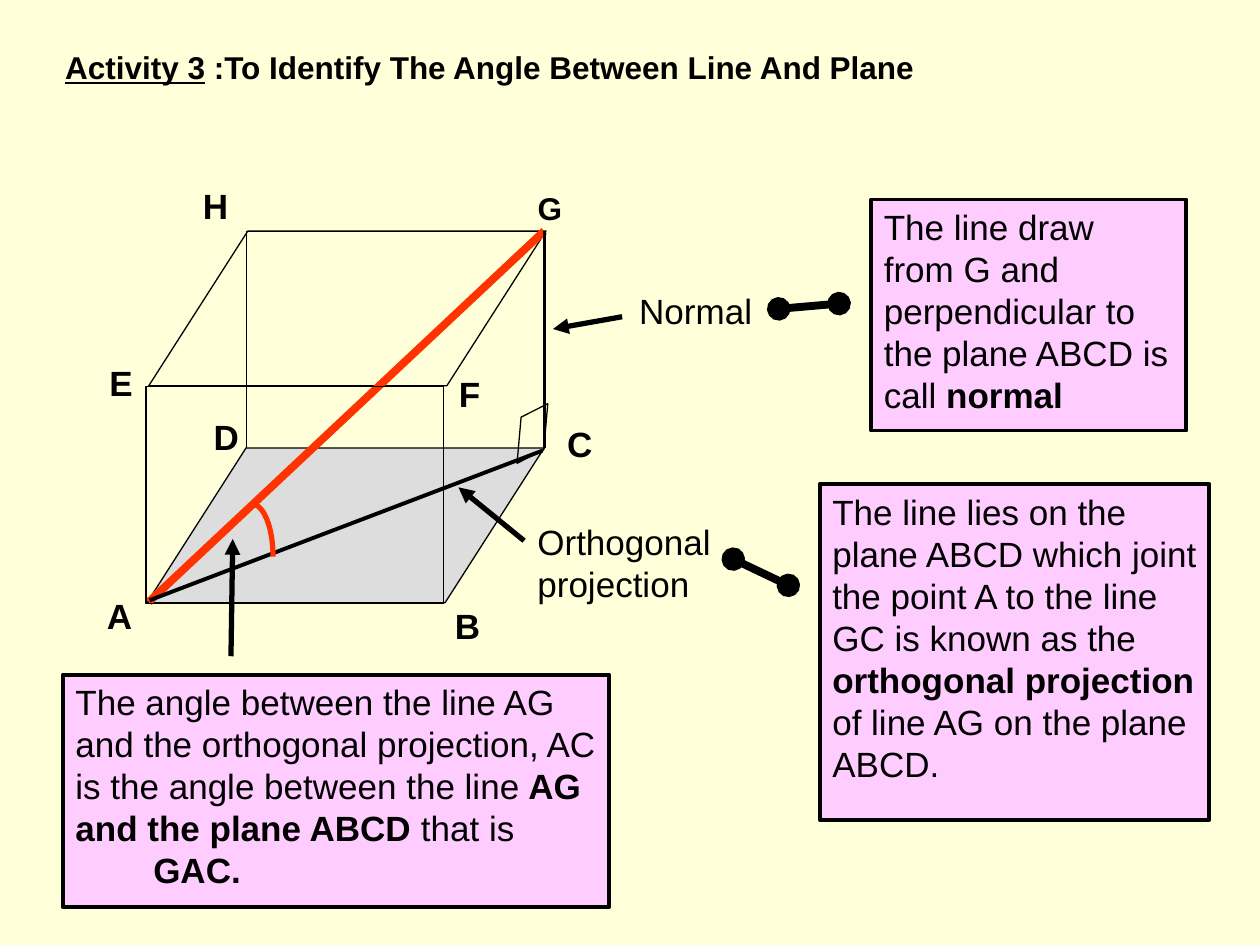
from dataclasses import dataclass
from lxml.etree import SubElement
from pptx import Presentation
from pptx.dml.color import RGBColor
from pptx.enum.shapes import MSO_CONNECTOR, MSO_SHAPE
from pptx.enum.text import MSO_ANCHOR, MSO_AUTO_SIZE, PP_ALIGN
from pptx.oxml.ns import qn
from pptx.util import Pt


@dataclass(frozen=True)
class Theme:
    font: str = "Arial"
    background: str = "FFFFD9"
    ink: str = "000000"
    accent: str = "FF3300"
    note: str = "FFCCFF"
    base: str = "DDDDDD"
    title_size: float = 18
    body_size: float = 20
    thin: float = 0.75
    edge: float = 1.5
    border: float = 2.25
    arrow: float = 3
    heavy: float = 4.5


class SlideBuilder:
    def __init__(self, presentation, theme):
        self.theme = theme
        self.slide = presentation.slides.add_slide(presentation.slide_layouts[5])
        fill = self.slide.background.fill
        fill.solid()
        fill.fore_color.rgb = RGBColor.from_string(theme.background)

    def add_runs(self, paragraph, runs, size, align=PP_ALIGN.LEFT):
        paragraph.alignment = align
        for text, style in runs:
            run = paragraph.add_run()
            run.text = text
            run.font.name = self.theme.font
            run.font.size = Pt(size)
            run.font.color.rgb = RGBColor.from_string(self.theme.ink)
            run.font.bold = "b" in style
            run.font.underline = "u" in style

    def title(self, box, runs):
        shape = self.slide.shapes.title
        shape.left, shape.top, shape.width, shape.height = map(Pt, box)
        frame = shape.text_frame
        frame.word_wrap = True
        frame.auto_size = MSO_AUTO_SIZE.NONE
        frame.vertical_anchor = MSO_ANCHOR.TOP
        self.add_runs(frame.paragraphs[0], runs, self.theme.title_size)

    def label(self, box, text, style="", size=None, align=PP_ALIGN.CENTER):
        frame = self.slide.shapes.add_textbox(*map(Pt, box)).text_frame
        frame.word_wrap = True
        self.add_runs(frame.paragraphs[0], [(text, style)], size or self.theme.body_size, align)

    def outline(self, kind, box, fill=None, color=None, width=None, slant=None):
        shape = self.slide.shapes.add_shape(kind, *map(Pt, box))
        shape.shadow.inherit = False
        if fill:
            shape.fill.solid()
            shape.fill.fore_color.rgb = RGBColor.from_string(fill)
        else:
            shape.fill.background()
        shape.line.color.rgb = RGBColor.from_string(color or self.theme.ink)
        shape.line.width = Pt(width or self.theme.thin)
        if slant:
            shape.adjustments[0] = slant
        return shape

    def note(self, box, runs, indented=None):
        shape = self.outline(MSO_SHAPE.RECTANGLE, box, self.theme.note, width=self.theme.border)
        frame = shape.text_frame
        frame.word_wrap = True
        frame.vertical_anchor = MSO_ANCHOR.TOP
        self.add_runs(frame.paragraphs[0], runs, self.theme.body_size)
        if indented:
            paragraph = frame.add_paragraph()
            paragraph._p.get_or_add_pPr().set("marL", str(Pt(44.5)))
            self.add_runs(paragraph, indented, self.theme.body_size)

    def line(self, start, end, width, color=None, head=None, tail=None):
        connector = self.slide.shapes.add_connector(
            MSO_CONNECTOR.STRAIGHT, *map(Pt, start + end))
        connector.line.color.rgb = RGBColor.from_string(color or self.theme.ink)
        connector.line.width = Pt(width)
        properties = connector._element.spPr
        for tag, kind in (("a:headEnd", head), ("a:tailEnd", tail)):
            if kind:
                SubElement(properties.find(qn("a:ln")), qn(tag), type=kind)
        SubElement(properties, qn("a:effectLst"))


def main():
    presentation = Presentation()
    presentation.slide_width, presentation.slide_height = Pt(720), Pt(540)
    theme = Theme()
    builder = SlideBuilder(presentation, theme)
    builder.title((30, 24, 648, 29), [
        ("Activity 3", "bu"), (" :To Identify The Angle Between Line And Plane", "b")])

    point_a, point_c, point_g = (85.5, 343), (310, 257.5), (311, 132)
    plane_size = (227, 88.5)
    face_size = (170, 124)
    slant = 0.64
    builder.outline(MSO_SHAPE.PARALLELOGRAM, (85, 132, *plane_size), slant=slant)
    builder.outline(MSO_SHAPE.RECTANGLE, (141, 132.5, *face_size))
    builder.outline(MSO_SHAPE.PARALLELOGRAM, (84, 256, *plane_size), theme.base, slant=slant)
    builder.line(point_g, (85, 344), theme.heavy, theme.accent)
    builder.outline(MSO_SHAPE.RECTANGLE, (83.5, 221, *face_size))

    vertices = {
        "A": (47, 336), "B": (246, 342), "C": (310, 238), "D": (108, 234),
        "E": (48, 203), "F": (247, 209.5), "H": (102, 102), "G": (293, 104.5),
    }
    for name, corner in vertices.items():
        size = theme.title_size if name == "G" else theme.body_size
        builder.label((*corner, 42.5, 35.5), name, "b", size)

    builder.line(point_c, point_a, theme.border)
    builder.line(point_g, (311, 256), theme.edge)
    right_angle = builder.outline(
        MSO_SHAPE.PARALLELOGRAM, (286.5, 240.5, 35.5, 14.5), slant=0.62)
    right_angle.rotation = 275
    right_angle._element.spPr.find(qn("a:xfrm")).set("flipV", "1")

    builder.label((300, 294, 120, 66), "Orthogonal projection", align=PP_ALIGN.LEFT)
    builder.label((348, 162, 99, 35.5), "Normal")
    arrows = [
        ((299.5, 309), (262, 278.5)),
        ((355.5, 181), (316, 188)),
        ((132, 375), (133, 308)),
    ]
    for start, end in arrows:
        builder.line(start, end, theme.arrow, tail="triangle")
    builder.outline(MSO_SHAPE.ARC, (132, 288, 24, 60), color=theme.accent, width=theme.arrow)

    for start, end in [((445, 176.5), (479.5, 173.5)), ((419, 319.5), (450.5, 334.5))]:
        builder.line(start, end, theme.heavy, head="oval", tail="oval")

    builder.note((498, 114, 180, 132), [
        ("The line draw from G and perpendicular to the plane ABCD is call ", ""),
        ("normal", "b")])
    builder.note((468.5, 276.5, 222.5, 192), [
        ("The line lies on the plane ABCD which joint the point A to the line GC is known as the ", ""),
        ("orthogonal projection", "b"),
        (" of line AG on the plane ABCD.", "")])
    builder.note((36, 385.5, 312, 133), [
        ("The angle between the line AG and the orthogonal projection, AC"
         " is the angle between the line", ""),
        (" AG and the plane ABCD", "b"),
        (" that is", "")], indented=[("GAC.", "b")])

    presentation.save("out.pptx")


if __name__ == "__main__":
    main()
